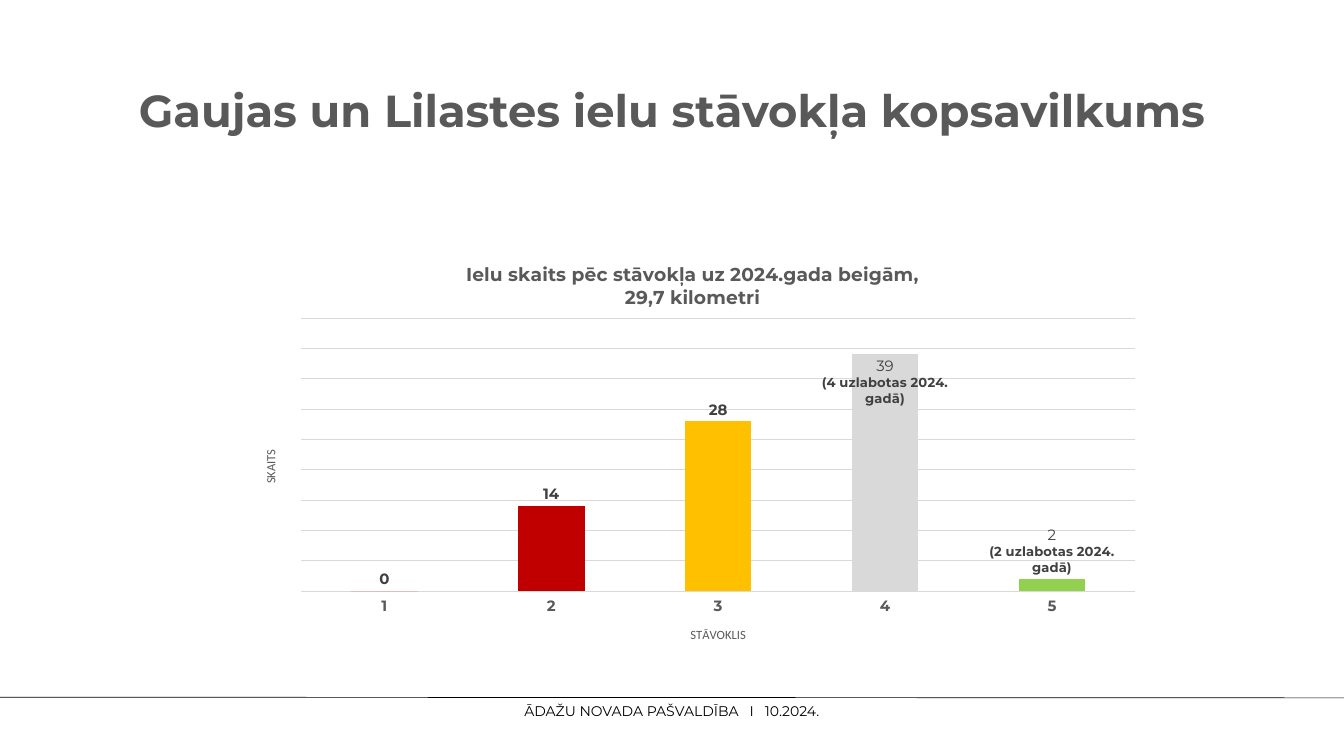
from lxml.etree import SubElement
from pptx import Presentation
from pptx.chart.data import CategoryChartData
from pptx.dml.color import RGBColor
from pptx.enum.chart import XL_CHART_TYPE as ChartType, XL_LABEL_POSITION as LabelPosition
from pptx.enum.chart import XL_TICK_MARK as TickMark
from pptx.enum.shapes import MSO_CONNECTOR as Connector
from pptx.enum.text import MSO_ANCHOR as Anchor, PP_ALIGN as Align
from pptx.oxml.ns import qn
from pptx.util import Pt

PX = 9525  # EMU per px, 96 px to the inch
BLACK = RGBColor(0, 0, 0)
GRAY = RGBColor(0x59, 0x59, 0x59)
LABEL = RGBColor(0x40, 0x40, 0x40)
GRID = RGBColor(0xD9, 0xD9, 0xD9)
SERIES = RGBColor(0x44, 0x72, 0xC4)
RED = RGBColor(0xFF, 0, 0)
DARK_RED = RGBColor(0xC0, 0, 0)
AMBER = RGBColor(0xFF, 0xC0, 0)
GREEN = RGBColor(0x92, 0xD0, 0x50)
FONT = "Montserrat"
AXIS_FONT = "Calibri"

# Content
TITLE = "Gaujas un Lilastes ielu stāvokļa kopsavilkums"
FOOTER = "ĀDAŽU NOVADA PAŠVALDĪBA   I   10.2024."
CHART_TITLE = ("Ielu skaits pēc stāvokļa uz 2024.gada beigām,", "29,7 kilometri")
CATEGORY_TITLE, VALUE_TITLE = "STĀVOKLIS", "SKAITS"
BARS = [("1", 0, RED), ("2", 14, DARK_RED), ("3", 28, AMBER), ("4", 39, GRID), ("5", 2, GREEN)]
NOTES = {
    3: ("(4 uzlabotas 2024. gadā)", LabelPosition.INSIDE_END),
    4: ("(2 uzlabotas 2024. gadā)", LabelPosition.OUTSIDE_END),
}


def style(font, size, color, bold=False, name=FONT):
    font.size, font.bold, font.name = Pt(size), bold, name
    font.color.rgb = color


def write(para, text, size=16, color=BLACK, bold=False, name=FONT, spacing=None):
    span = para.add_run()
    span.text = text
    style(span.font, size, color, bold, name)
    # Chart paragraphs have the same properties as slide paragraphs
    para.alignment = Align.CENTER
    if spacing:
        para.line_spacing = spacing


def add_text(slide, text, left, top, width, height, anchor=Anchor.TOP, **text_format):
    box = slide.shapes.add_textbox(left * PX, top * PX, width * PX, height * PX)
    frame = box.text_frame
    frame.word_wrap, frame.vertical_anchor = True, anchor
    frame.margin_left = frame.margin_right = frame.margin_top = frame.margin_bottom = 0
    write(frame.paragraphs[0], text, **text_format)


def place(parent, index, **parts):
    """Place a chart part by fractions of the chart area; its layout is child number index."""
    old = parent.find(qn("c:layout"))
    if old is not None:
        parent.remove(old)
    layout = parent.makeelement(qn("c:layout"))
    parent.insert(index, layout)
    manual = SubElement(layout, qn("c:manualLayout"))
    for tag, value in parts.items():
        SubElement(manual, qn("c:" + tag)).set("val", str(value))


def add_chart(slide):
    data = CategoryChartData()
    data.categories = [name for name, _, _ in BARS]
    data.add_series("Series 1", [value for _, value, _ in BARS])
    chart = slide.shapes.add_chart(
        ChartType.COLUMN_CLUSTERED, 352 * PX, 348 * PX, 1296 * PX, 591 * PX, data).chart
    style(chart.font, 10, BLACK, name=AXIS_FONT)
    chart.has_legend = False

    # Titles
    frame = chart.chart_title.text_frame
    for index, text in enumerate(CHART_TITLE):
        para = frame.add_paragraph() if index else frame.paragraphs[0]
        write(para, text, size=20, color=GRAY, bold=True)
    chart_xml = chart.element.find(qn("c:chart"))
    place(chart_xml.find(qn("c:title")), 1, xMode="edge", yMode="edge", x=0.24, y=0.04)
    for axis, text in ((chart.category_axis, CATEGORY_TITLE), (chart.value_axis, VALUE_TITLE)):
        para = axis.axis_title.text_frame.paragraphs[0]
        write(para, text, size=13.5, color=GRAY, name=AXIS_FONT)
    body = chart.value_axis.axis_title.text_frame._txBody.find(qn("a:bodyPr"))
    body.set("rot", "-5400000")
    body.set("vert", "horz")

    # Axes and plot area
    categories, values = chart.category_axis, chart.value_axis
    style(categories.tick_labels.font, 16, GRAY, bold=True)
    categories.format.line.fill.background()
    categories.major_tick_mark = TickMark.OUTSIDE
    values.minimum_scale, values.maximum_scale, values.major_unit = 0, 45, 5
    values.visible = False
    grid = values.major_gridlines.format.line
    grid.color.rgb, grid.width = GRID, Pt(0.75)
    place(chart_xml.find(qn("c:plotArea")), 0, layoutTarget="inner",
          xMode="edge", yMode="edge", x=0.06, y=0.18, w=0.92, h=0.66)

    # Bars and labels
    plot = chart.plots[0]
    plot.gap_width, plot.vary_by_categories = 150, False
    series = plot.series[0]
    series.format.fill.solid()
    series.format.fill.fore_color.rgb = SERIES
    labels = series.data_labels
    labels.show_value, labels.position = True, LabelPosition.OUTSIDE_END
    style(labels.font, 16, LABEL, bold=True)
    for index, (_, value, color) in enumerate(BARS):
        fill = series.points[index].format.fill
        fill.solid()
        fill.fore_color.rgb = color
        if index in NOTES:
            note, position = NOTES[index]
            label = series.points[index].data_label
            frame = label.text_frame
            write(frame.paragraphs[0], str(value), color=LABEL)
            write(frame.add_paragraph(), note, size=14, color=LABEL, bold=True)
            label.position = position


def main():
    deck = Presentation()
    deck.slide_width, deck.slide_height = 1920 * PX, 1080 * PX
    slide = deck.slides.add_slide(deck.slide_layouts[6])

    # Heading and chart
    add_text(slide, TITLE, 132, 58, 1656, 208, anchor=Anchor.MIDDLE,
             size=48, color=GRAY, bold=True, spacing=0.9)
    add_chart(slide)

    # Footer
    rule = slide.shapes.add_connector(Connector.STRAIGHT, -1 * PX, 996 * PX, 1921 * PX, 997 * PX)
    rule.line.color.rgb, rule.line.width = BLACK, Pt(0.75)
    SubElement(rule._element.spPr, qn("a:effectLst"))
    add_text(slide, FOOTER, 10, 1004, 1900, 24, size=15, spacing=Pt(18))

    deck.save("out.pptx")


if __name__ == "__main__":
    main()
